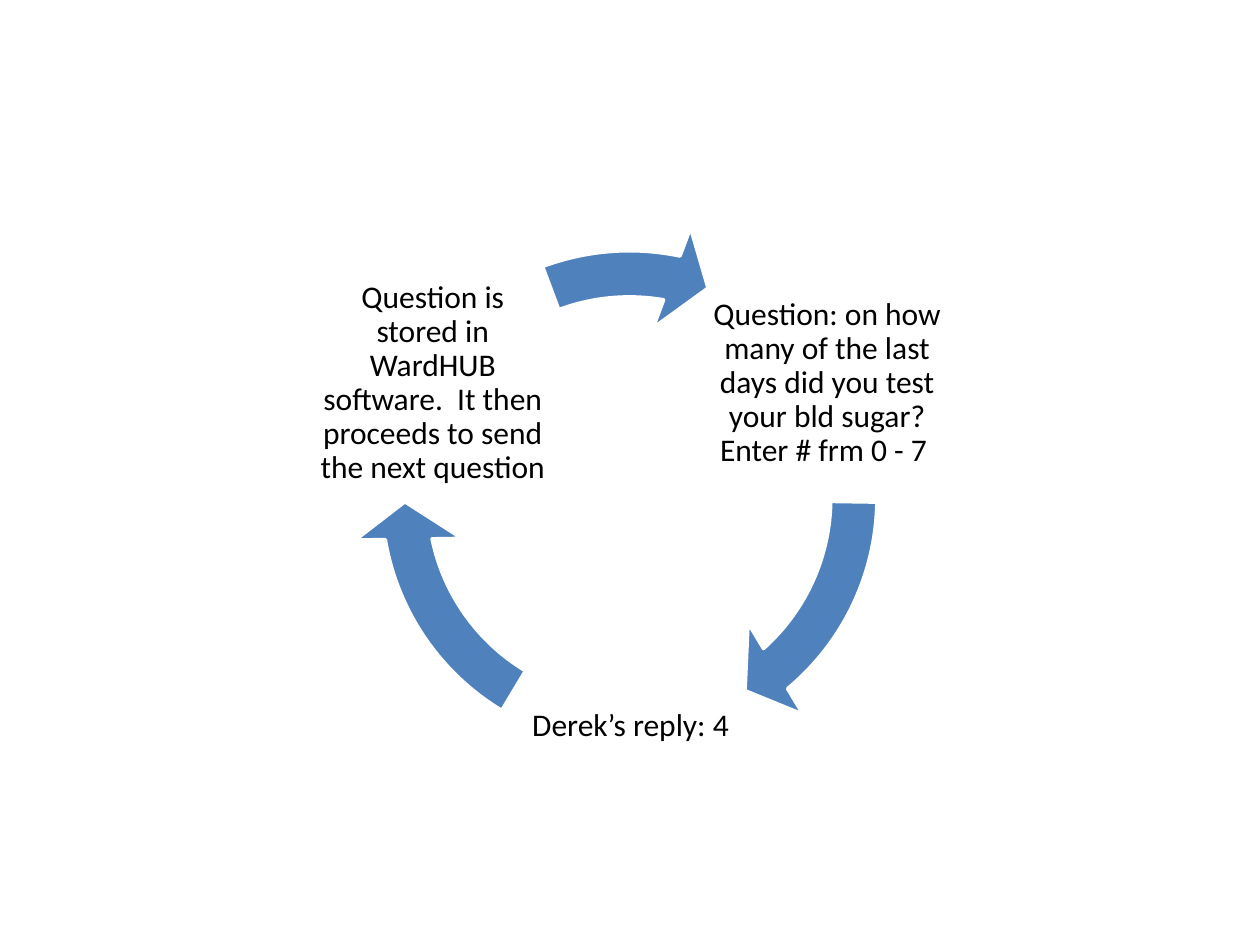
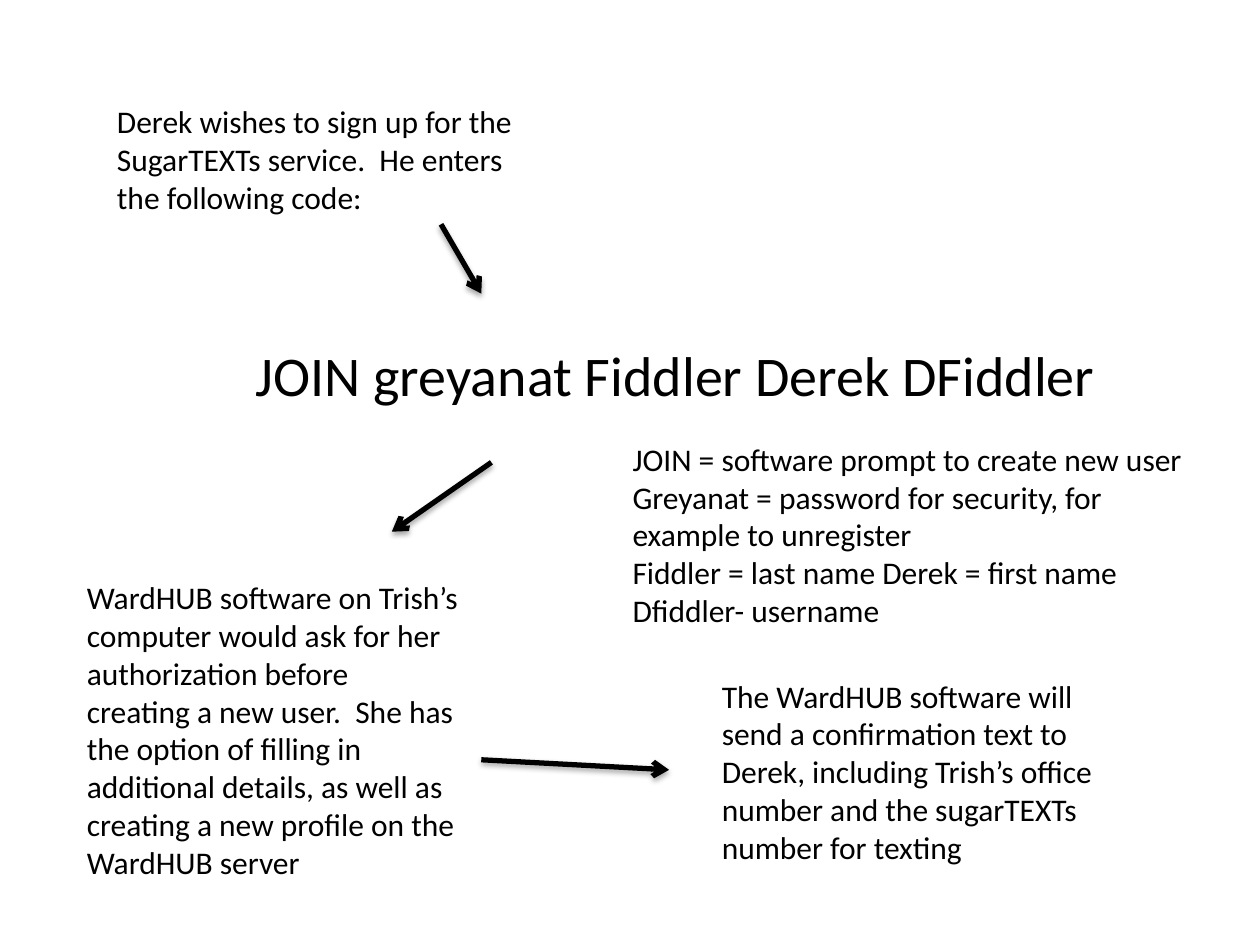
"""Build two slides on a diabetes texting service: a question cycle and the sign-up flow."""
from lxml.etree import SubElement
from pptx import Presentation
from pptx.dml.color import RGBColor
from pptx.enum.shapes import MSO_CONNECTOR, MSO_SHAPE
from pptx.enum.text import MSO_ANCHOR, MSO_AUTO_SIZE, PP_ALIGN
from pptx.oxml import parse_xml
from pptx.oxml.ns import nsdecls, qn
from pptx.util import Inches, Pt

COLORS = {"text": "000000", "arrow": "4F81BD", "edge": "FFFFFF", "line": "000000"}
FONT = "Calibri"

CYCLE_STEPS = [
    ("Question: on how many of the last days did you test your bld sugar? Enter # frm 0 - 7 ", 5.63, 2.11),
    ("Derek’s reply: 4", 4.07, 4.83),
    ("Question is stored in WardHUB software.  It then proceeds to send the next question", 2.5, 2.11),
]
CYCLE_ARCS = [(29.615, 0.533), (101.7, 72.619), (168.545, 149.689)]
STEP_SIZE = 1.87
RING = (2.79, 1.75, 4.41, 4.41)

JOIN_CODE = ("JOIN greyanat Fiddler Derek DFiddler", (1.93, 2.65, 6.93, 0.64))
CODE_PARTS = ([
    "JOIN = software prompt to create new user",
    "Greyanat = password for security, for example to unregister",
    "Fiddler = last name Derek = first name",
    "Dfiddler- username",
], (4.92, 3.44, 4.72, 1.62))
SIGNUP_NOTES = [
    ("Derek wishes to sign up for the SugarTEXTs service.  He enters the following code:",
     (0.83, 0.76, 3.62, 1.01)),
    ("WardHUB software on Trish’s computer would ask for her authorization before creating "
     "a new user.  She has the option of filling in additional details, as well as creating "
     "a new profile on the WardHUB server", (0.59, 4.54, 3.15, 2.52)),
    ("The WardHUB software will send a confirmation text to Derek, including Trish’s office "
     "number and the sugarTEXTs number for texting", (5.63, 5.32, 3.15, 1.92)),
]
SIGNUP_ARROWS = [(3.5, 1.78, 3.82, 2.33), (3.9, 3.67, 3.11, 4.22), (3.82, 6.03, 5.31, 6.11)]

FRAME = {"word_wrap": True, "auto_size": MSO_AUTO_SIZE.NONE, "vertical_anchor": MSO_ANCHOR.TOP}
STEP_FRAME = FRAME | {"vertical_anchor": MSO_ANCHOR.MIDDLE} | {
    f"margin_{side}": Inches(0.03) for side in ("left", "top", "right", "bottom")}
PARAGRAPH = {"alignment": PP_ALIGN.LEFT, "space_before": Pt(0)}
STEP_PARAGRAPH = {"alignment": PP_ALIGN.CENTER, "line_spacing": 0.9}

SHADOW = (f'<a:effectLst {nsdecls("a")}><a:outerShdw blurRad="40000" dist="23000" dir="5400000" '
          'rotWithShape="0"><a:srgbClr val="000000"><a:alpha val="35000"/></a:srgbClr>'
          '</a:outerShdw></a:effectLst>')


def apply(target, values):
    for name, value in values.items():
        setattr(target, name, value)


def rgb(name):
    return RGBColor.from_string(COLORS[name])


def place(sp, box):
    apply(sp, dict(zip(("left", "top", "width", "height"), map(Inches, box))))


def write(sp, lines, size=18, frame=FRAME, paragraph=PARAGRAPH):
    tf = sp.text_frame
    apply(tf, frame)
    for i, line in enumerate(lines):
        p = tf.paragraphs[0] if i == 0 else tf.add_paragraph()
        apply(p, paragraph)
        r = p.add_run()
        r.text = line
        apply(r.font, {"name": FONT, "size": Pt(size)})
        r.font.color.rgb = rgb("text")


def add_text(s, text, box, **formats):
    write(s.shapes.add_textbox(*map(Inches, box)), [text], **formats)


def add_arc(s, end, start):
    sp = s.shapes.add_shape(MSO_SHAPE.CIRCULAR_ARROW, *map(Inches, RING))
    for i, value in enumerate((0.083, 5.766, end, start, 0.096)):
        sp.adjustments[i] = value
    sp.shadow.inherit = False
    sp.fill.solid()
    sp.fill.fore_color.rgb = rgb("arrow")
    sp.line.color.rgb = rgb("edge")
    sp.line.width = Pt(2)


def add_arrow(s, ends):
    line = s.shapes.add_connector(MSO_CONNECTOR.STRAIGHT, *map(Inches, ends))
    line.line.color.rgb = rgb("line")
    line.line.width = Pt(3)
    SubElement(line.line._get_or_add_ln(), qn("a:tailEnd"), type="arrow")
    line._element.spPr.append(parse_xml(SHADOW))


def build_cycle(prs):
    s = prs.slides.add_slide(prs.slide_layouts.get_by_name("Blank"))
    for (text, left, top), arc in zip(CYCLE_STEPS, CYCLE_ARCS):
        add_text(s, text, (left, top, STEP_SIZE, STEP_SIZE),
                 frame=STEP_FRAME, paragraph=STEP_PARAGRAPH)
        add_arc(s, *arc)


def build_signup(prs):
    s = prs.slides.add_slide(prs.slide_layouts.get_by_name("Title and Content"))
    title, body = s.placeholders
    code, box = JOIN_CODE
    place(title, box)
    write(title, [code], size=32, frame=FRAME | {"word_wrap": False})
    parts, box = CODE_PARTS
    place(body, box)
    write(body, parts)
    for p in body.text_frame.paragraphs:
        pPr = p._p.get_or_add_pPr()
        pPr.set("marL", "0")
        pPr.set("indent", "0")
        SubElement(pPr, qn("a:buNone"))
    for text, box in SIGNUP_NOTES:
        add_text(s, text, box)
    for ends in SIGNUP_ARROWS:
        add_arrow(s, ends)


def main():
    prs = Presentation()
    apply(prs, {"slide_width": Inches(10), "slide_height": Inches(7.5)})
    build_cycle(prs)
    build_signup(prs)
    prs.save("out.pptx")


if __name__ == "__main__":
    main()
